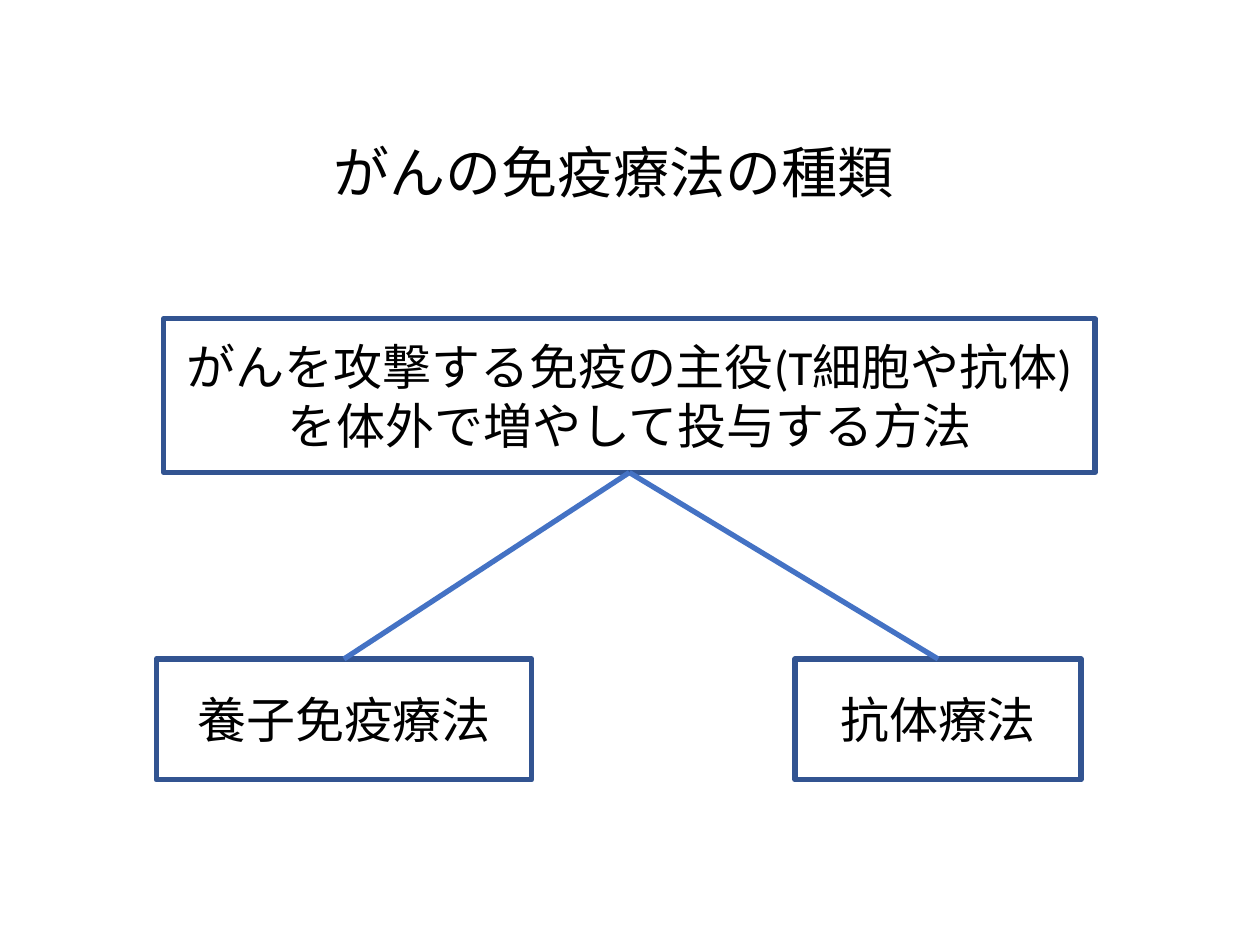
import dataclasses

import lxml.etree
import pptx
import pptx.dml.color
import pptx.enum.shapes
import pptx.enum.text
import pptx.oxml.ns
import pptx.util

Inches = pptx.util.Inches
TOP, BOTTOM = 0, 2


@dataclasses.dataclass(frozen=True)
class Theme:
    text: str = "000000"
    border: str = "325491"
    branch: str = "4472C4"
    title_font: str = "Arial"
    body_font: str = "Calibri"
    title_size: int = 32
    body_size: int = 28
    line_width: int = 3


THEME = Theme()


def color(value):
    return pptx.dml.color.RGBColor.from_string(value)


def write_text(shape, text, font, size, alignment):
    frame = shape.text_frame
    frame.word_wrap = True
    frame.vertical_anchor = pptx.enum.text.MSO_ANCHOR.MIDDLE
    paragraph = frame.paragraphs[0]
    paragraph.alignment = alignment
    run = paragraph.add_run()
    run.text = text
    run.font.name = font
    run.font.size = pptx.util.Pt(size)
    run.font.color.rgb = color(THEME.text)
    return paragraph


def style_line(line, value):
    line.color.rgb = color(value)
    line.width = pptx.util.Pt(THEME.line_width)


def add_title(slide, text, left, top, width, height):
    shape = slide.shapes.add_textbox(*map(Inches, (left, top, width, height)))
    paragraph = write_text(shape, text, THEME.title_font, THEME.title_size,
                           pptx.enum.text.PP_ALIGN.LEFT)
    paragraph.line_spacing = 0.9


def add_box(slide, text, left, top, width, height):
    shape = slide.shapes.add_shape(
        pptx.enum.shapes.MSO_SHAPE.RECTANGLE,
        *map(Inches, (left, top, width, height)))
    shape.shadow.inherit = False
    shape.fill.background()
    style_line(shape.line, THEME.border)
    write_text(shape, text, THEME.body_font, THEME.body_size,
               pptx.enum.text.PP_ALIGN.CENTER)
    return shape


def add_branch(slide, parent, child):
    connector = slide.shapes.add_connector(
        pptx.enum.shapes.MSO_CONNECTOR.STRAIGHT, 0, 0, 0, 0)
    connector.begin_connect(parent, BOTTOM)
    connector.end_connect(child, TOP)
    style_line(connector.line, THEME.branch)
    lxml.etree.SubElement(connector._element.spPr,
                          pptx.oxml.ns.qn("a:effectLst"))


def main():
    presentation = pptx.Presentation()
    presentation.slide_width = Inches(10)
    presentation.slide_height = Inches(7.5)
    slide = presentation.slides.add_slide(presentation.slide_layouts[6])

    add_title(slide, "がんの免疫療法の種類", 2.55, 0.98, 4.89, 0.83)
    principle = add_box(
        slide, "がんを攻撃する免疫の主役(T細胞や抗体)を体外で増やして投与する方法",
        1.3, 2.53, 7.39, 1.22)
    therapies = [
        add_box(slide, text, left, 5.23, width, 0.96)
        for text, left, width in (("養子免疫療法", 1.24, 2.98),
                                  ("抗体療法", 6.31, 2.27))
    ]
    for therapy in therapies:
        add_branch(slide, principle, therapy)

    presentation.save("out.pptx")


if __name__ == "__main__":
    main()
